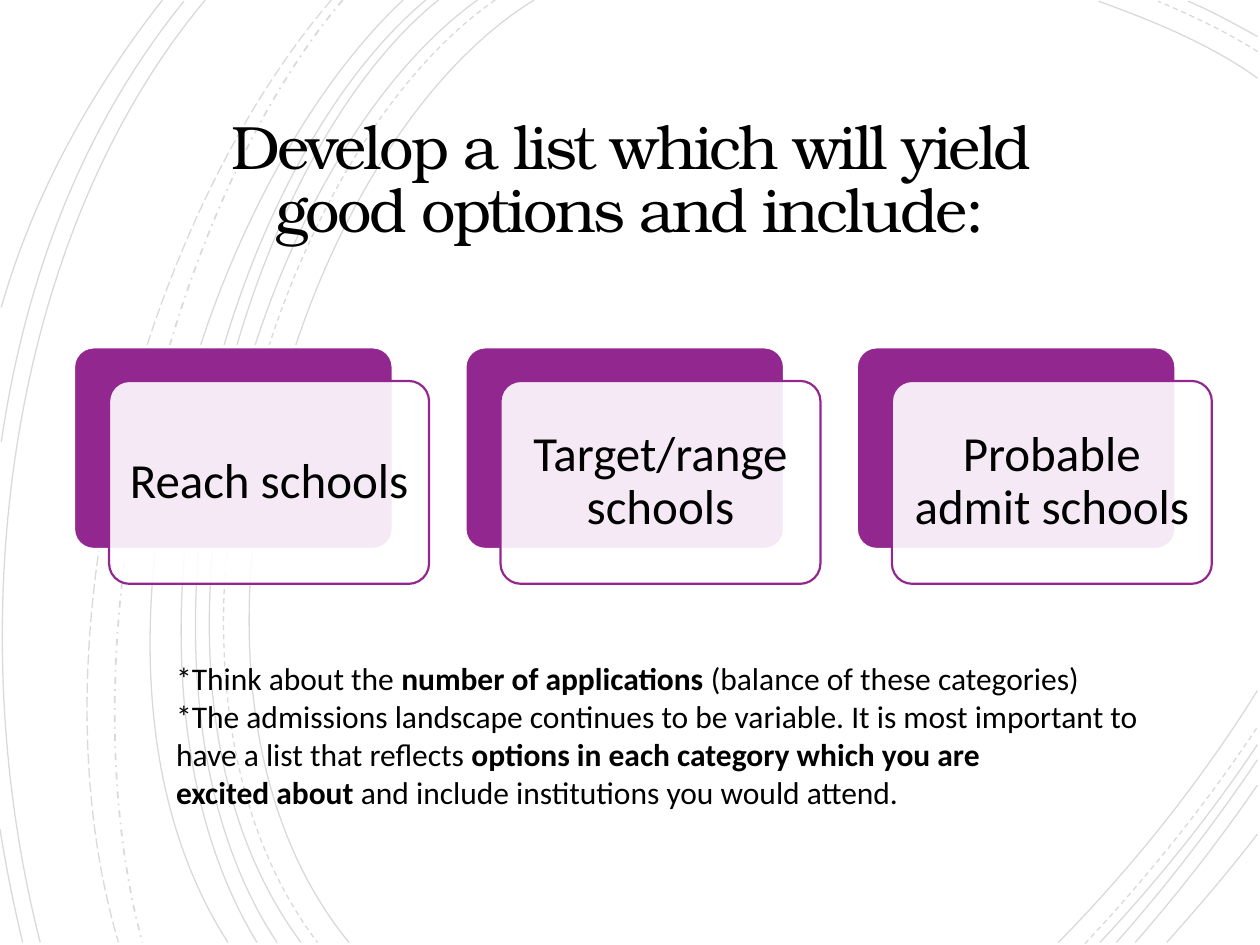
from lxml import etree
from pptx import Presentation
from pptx.dml.color import RGBColor
from pptx.enum import dml, shapes, text
from pptx.oxml import ns
from pptx.util import Cm, Pt

BLACK = RGBColor(0x00, 0x00, 0x00)
WHITE = RGBColor(0xFF, 0xFF, 0xFF)
PURPLE = RGBColor(0x92, 0x27, 0x8F)
TITLE_FONT, BODY_FONT = "TeX Gyre Bonum", "Calibri"
NBSP = chr(160)  # keeps words together on one line

# Content
TITLE = "Develop a list which will yield good options and include:"
CARDS = ["Reach schools", "Target/range schools", "Probable admit schools"]
NOTES = [  # paragraphs of (text, bold)
    [("*Think about the ", False),
     ("number of applications ", True),
     ("(balance of these categories)", False)],
    [(f"*The admissions landscape continues to be variable.{NBSP}It is most "
      "important to have a list that reflects ", False),
     (f"options in each category{NBSP}which you are excited{NBSP}about", True),
     (" and include institutions you would attend.", False)],
]

# Background arcs: start, two control points, end, on a 1000 x 750 grid
SOLID, DASH = dml.MSO_LINE.SOLID, dml.MSO_LINE.DASH
DASH_DOT, LONG_DASH = dml.MSO_LINE.DASH_DOT, dml.MSO_LINE.LONG_DASH
GRID = Cm(25.4) / 1000
ARCS = [
    # left sweep
    (SOLID, (424, 0), (236, 115), (107, 540), (277, 748)),
    (DASH, (393, 0), (213, 125), (92, 537), (252, 748)),
    (SOLID, (379, 0), (202, 127), (82, 537), (239, 748)),
    (SOLID, (348, 0), (183, 133), (82, 541), (220, 748)),
    (SOLID, (338, 0), (173, 138), (73, 533), (204, 748)),
    (SOLID, (320, 0), (163, 147), (40, 529), (181, 748)),
    (DASH_DOT, (272, 0), (132, 166), (49, 509), (113, 748)),
    (LONG_DASH, (263, 0), (118, 169), (21, 499), (94, 748)),
    (SOLID, (163, 0), (8, 185), (-34, 490), (32, 748)),
    (SOLID, (146, 1), (69, 96), (21, 214), (1, 351)),
    (SOLID, (129, 0), (75, 69), (28, 150), (1, 244)),
    (SOLID, (0, 658), (5, 689), (11, 719), (18, 748)),
    # top right corner
    (SOLID, (998, 62), (959, 34), (913, 16), (872, 1)),
    (DASH, (998, 41), (973, 25), (945, 12), (919, 1)),
    (SOLID, (998, 29), (980, 19), (962, 9), (943, 1)),
    # bottom right corner
    (SOLID, (840, 748), (897, 690), (952, 622), (998, 548)),
    (DASH, (861, 749), (909, 698), (956, 640), (998, 577)),
    (SOLID, (873, 748), (917, 701), (960, 648), (998, 591)),
    (SOLID, (886, 748), (925, 704), (963, 655), (998, 603)),
    (SOLID, (901, 748), (935, 709), (968, 667), (998, 623)),
    (SOLID, (926, 748), (950, 721), (975, 692), (998, 662)),
]


def set_alpha(fill, percent):
    color = fill._xPr.find(".//" + ns.qn("a:srgbClr"))
    etree.SubElement(color, ns.qn("a:alpha"), val=str(percent * 1000))


def add_arc(s, dash, points):
    start, *rest = points
    builder = s.shapes.build_freeform(*start, scale=GRID)
    builder.add_line_segments(rest, close=False)
    sp = builder.convert_to_shape()
    # Turn the three line segments into one cubic curve
    outline = sp._element.find(".//" + ns.qn("a:path"))
    curve = etree.SubElement(outline, ns.qn("a:cubicBezTo"))
    for segment in outline.findall(ns.qn("a:lnTo")):
        curve.append(segment[0])
        outline.remove(segment)
    sp.shadow.inherit = False
    sp.fill.background()
    sp.line.color.rgb = BLACK
    set_alpha(sp.line.fill, 15)
    sp.line.width = Pt(1 if dash == DASH_DOT else 0.75)
    sp.line.dash_style = dash


def add_box(s, left, top, fill, line, width):
    sp = s.shapes.add_shape(shapes.MSO_SHAPE.ROUNDED_RECTANGLE,
                            Cm(left), Cm(top), Cm(6.45), Cm(4.09))
    sp.adjustments[0] = 0.1
    sp.shadow.inherit = False
    sp.fill.solid()
    sp.fill.fore_color.rgb = fill
    sp.line.color.rgb = line
    sp.line.width = Pt(width)
    return sp


def place(sp, left, top, width, height):
    sp.left, sp.top, sp.width, sp.height = map(Cm, (left, top, width, height))


def set_frame(tf, anchor, inset_x, inset_y):
    tf.word_wrap = True
    tf.auto_size = text.MSO_AUTO_SIZE.NONE
    tf.vertical_anchor = anchor
    tf.margin_left = tf.margin_right = Cm(inset_x)
    tf.margin_top = tf.margin_bottom = Cm(inset_y)


def set_font(r, name, size, bold=False):
    r.font.name, r.font.size, r.font.bold = name, Pt(size), bold
    r.font.color.rgb = BLACK


prs = Presentation()
prs.slide_width, prs.slide_height = Cm(25.4), Cm(19.05)
s = prs.slides.add_slide(prs.slide_layouts[1])
title, body = s.shapes.title, s.placeholders[1]

# White panel and arcs, then the placeholders above them
panel = s.shapes.add_shape(shapes.MSO_SHAPE.RECTANGLE, 0, 0,
                           prs.slide_width, prs.slide_height)
panel.shadow.inherit = False
panel.fill.solid()
panel.fill.fore_color.rgb = WHITE
panel.line.fill.background()
for dash, *points in ARCS:
    add_arc(s, dash, points)
for sp in (title, body):
    s.shapes._spTree.append(sp._element)

# Title
place(title, 3.67, 2.21, 18.06, 2.92)
tf = title.text_frame
tf.text = TITLE
set_frame(tf, text.MSO_ANCHOR.MIDDLE, 0.64, 0.64)
p = tf.paragraphs[0]
p.alignment = text.PP_ALIGN.CENTER
p.line_spacing = 0.85
p.space_after = Pt(6)
set_font(p.runs[0], TITLE_FONT, 35)
p.runs[0].font._element.set("spc", "-150")

# Cards: a purple box with a translucent one in front
for i, label in enumerate(CARDS):
    left, top = 1.48 + 7.89 * i, 6.99
    add_box(s, left, top, PURPLE, WHITE, 2)
    front = add_box(s, left + 0.72, top + 0.69, WHITE, PURPLE, 1.25)
    set_alpha(front.fill, 90)
    tf = front.text_frame
    tf.text = label
    set_frame(tf, text.MSO_ANCHOR.MIDDLE, 0.25, 0.3)
    p = tf.paragraphs[0]
    p.alignment = text.PP_ALIGN.CENTER
    p.line_spacing = 0.9
    set_font(p.runs[0], BODY_FONT, 28)

# Notes
place(body, 3.3, 13.16, 20.07, 4.88)
tf = body.text_frame
set_frame(tf, text.MSO_ANCHOR.TOP, 0.25, 0.13)
for i, parts in enumerate(NOTES):
    p = tf.add_paragraph() if i else tf.paragraphs[0]
    p.space_before = Pt(0)
    pPr = p._p.get_or_add_pPr()
    pPr.set("marL", "0")
    pPr.set("indent", "0")
    etree.SubElement(pPr, ns.qn("a:buNone"))
    for words, bold in parts:
        r = p.add_run()
        r.text = words
        set_font(r, BODY_FONT, 18, bold)

prs.save("out.pptx")
